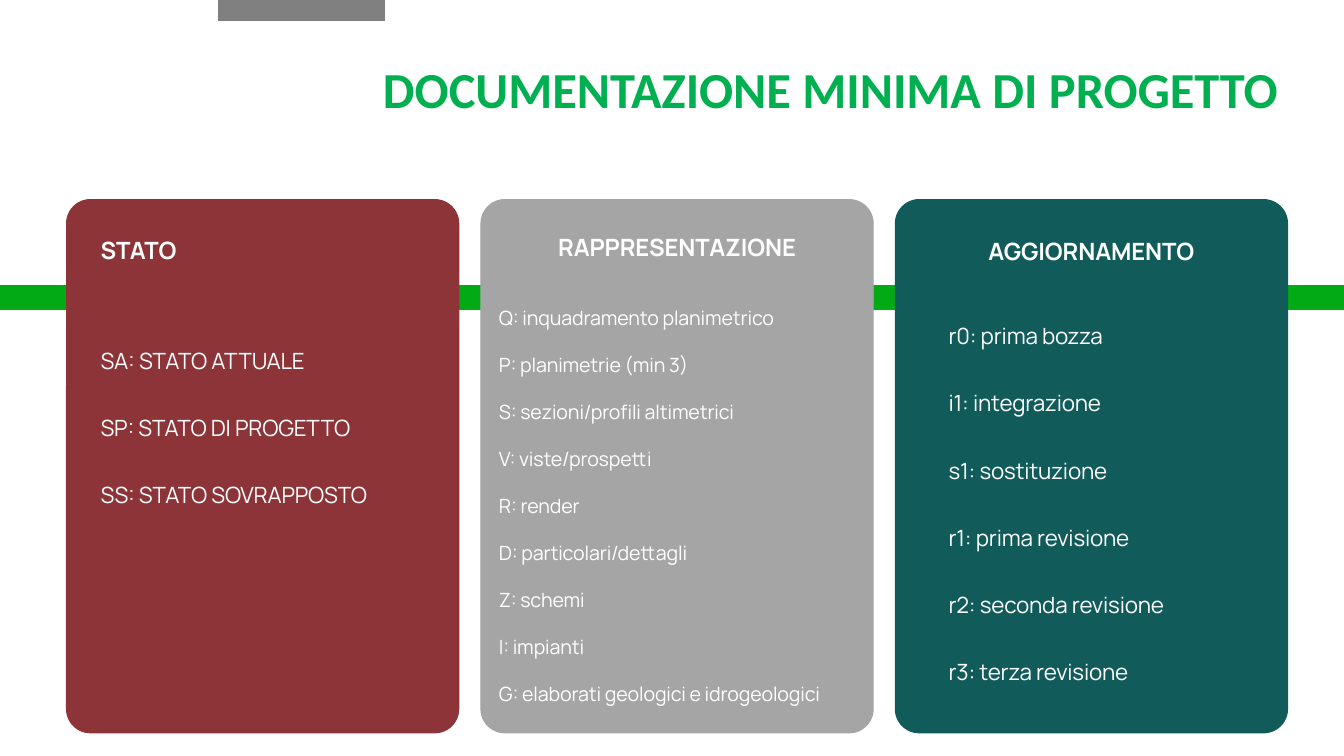
from dataclasses import dataclass

from pptx import Presentation
from pptx.dml.color import RGBColor
from pptx.enum.shapes import MSO_SHAPE
from pptx.enum.text import MSO_ANCHOR, MSO_AUTO_SIZE, PP_ALIGN
from pptx.util import Inches, Pt

RECTANGLE = MSO_SHAPE.RECTANGLE
ROUNDED = MSO_SHAPE.ROUNDED_RECTANGLE
TOP, BOTTOM = MSO_ANCHOR.TOP, MSO_ANCHOR.BOTTOM
LEFT, CENTER = PP_ALIGN.LEFT, PP_ALIGN.CENTER
GROW = MSO_AUTO_SIZE.SHAPE_TO_FIT_TEXT


@dataclass(frozen=True)
class Theme:
    band: str = "02AA16"
    title: str = "00B050"
    tab: str = "808080"
    white: str = "FFFFFF"
    red: str = "8C3438"
    gray: str = "A5A5A5"
    teal: str = "115B5A"
    title_font: str = "Calibri"
    body_font: str = "Manrope"
    title_size: int = 36
    heading_size: int = 17
    item_size: int = 16
    small_size: int = 14


THEME = Theme()
CARD_LEFT, CARD_TOP, CARD_PITCH = 0.66, 1.98, 4.11
CARD_WIDTH, CARD_HEIGHT = 3.89, 5.29
TEXT_WIDTH, HEADING_HEIGHT = 3.27, 0.39

CARDS = [
    dict(
        color=THEME.red,
        heading="STATO",
        heading_at=(0.9, 2.28),
        align=LEFT,
        items=["SA: STATO ATTUALE", "SP: STATO DI PROGETTO", "SS: STATO SOVRAPPOSTO"],
        items_at=(0.9, 2.99, TEXT_WIDTH, 2.02),
        items_format=dict(size=THEME.item_size, line_spacing=2.5),
    ),
    dict(
        color=THEME.gray,
        heading="RAPPRESENTAZIONE",
        heading_at=(5.08, 2.25),
        align=CENTER,
        items=[
            "Q: inquadramento planimetrico",
            "P: planimetrie (min 3)",
            "S: sezioni/profili altimetrici",
            "V: viste/prospetti",
            "R: render",
            "D: particolari/dettagli",
            "Z: schemi",
            "I: impianti",
            "G: elaborati geologici e idrogeologici",
        ],
        items_at=(4.66, 2.75, 4, 4.28),
        items_format=dict(size=THEME.small_size, line_spacing=2.0, indent=0.19),
    ),
    dict(
        color=THEME.teal,
        heading="AGGIORNAMENTO",
        heading_at=(9.19, 2.29),
        align=CENTER,
        items=[
            "r0: prima bozza",
            "i1: integrazione",
            "s1: sostituzione",
            "r1: prima revisione",
            "r2: seconda revisione",
            "r3: terza revisione",
        ],
        items_at=(9.31, 2.75, TEXT_WIDTH, 4.03),
        items_format=dict(size=THEME.item_size, line_spacing=2.5),
    ),
]


def add_block(page, kind, at, fill, line, line_width):
    block = page.shapes.add_shape(kind, *map(Inches, at))
    block.shadow.inherit = False
    block.fill.solid()
    block.fill.fore_color.rgb = RGBColor.from_string(fill)
    block.line.color.rgb = RGBColor.from_string(line)
    block.line.width = Pt(line_width)
    return block


def add_text(page, lines, at, *, size, font=THEME.body_font, color=THEME.white,
             bold=False, align=LEFT, anchor=TOP, line_spacing=1.0, indent=0, tracking=-10):
    box = page.shapes.add_textbox(*map(Inches, at))
    frame = box.text_frame
    frame.word_wrap = True
    frame.auto_size = GROW
    frame.vertical_anchor = anchor
    for index, line in enumerate(lines):
        para = frame.add_paragraph() if index else frame.paragraphs[0]
        para.alignment = align
        para.line_spacing = line_spacing
        span = para.add_run()
        span.text = line
        span.font.name = font
        span.font.size = Pt(size)
        span.font.bold = bold
        span.font.color.rgb = RGBColor.from_string(color)
        if tracking:
            span.font._element.set("spc", str(tracking))
        if indent:
            properties = para._p.get_or_add_pPr()
            properties.set("marL", str(Inches(indent)))
            properties.set("indent", "0")


def add_card(page, left, card):
    panel = add_block(page, ROUNDED, (left, CARD_TOP, CARD_WIDTH, CARD_HEIGHT),
                      card["color"], card["color"], 0.75)
    panel.adjustments[0] = 0.061
    add_text(page, [card["heading"]], (*card["heading_at"], TEXT_WIDTH, HEADING_HEIGHT),
             size=THEME.heading_size, bold=True, align=card["align"], anchor=BOTTOM)
    add_text(page, card["items"], card["items_at"], **card["items_format"])


def main():
    deck = Presentation()
    deck.slide_width, deck.slide_height = Inches(13.33), Inches(7.5)
    page = deck.slides.add_slide(deck.slide_layouts[6])
    add_block(page, RECTANGLE, (0, 2.83, 13.33, 0.24), THEME.band, THEME.band, 1)
    add_block(page, RECTANGLE, (2.16, -0.02, 1.67, 0.24), THEME.tab, THEME.white, 1)
    add_text(page, ["DOCUMENTAZIONE MINIMA DI PROGETTO"], (3.7, 0.53, 9.55, 0.71),
             size=THEME.title_size, font=THEME.title_font, color=THEME.title,
             bold=True, tracking=0)
    for index, card in enumerate(CARDS):
        add_card(page, CARD_LEFT + index * CARD_PITCH, card)
    deck.save("out.pptx")


if __name__ == "__main__":
    main()
